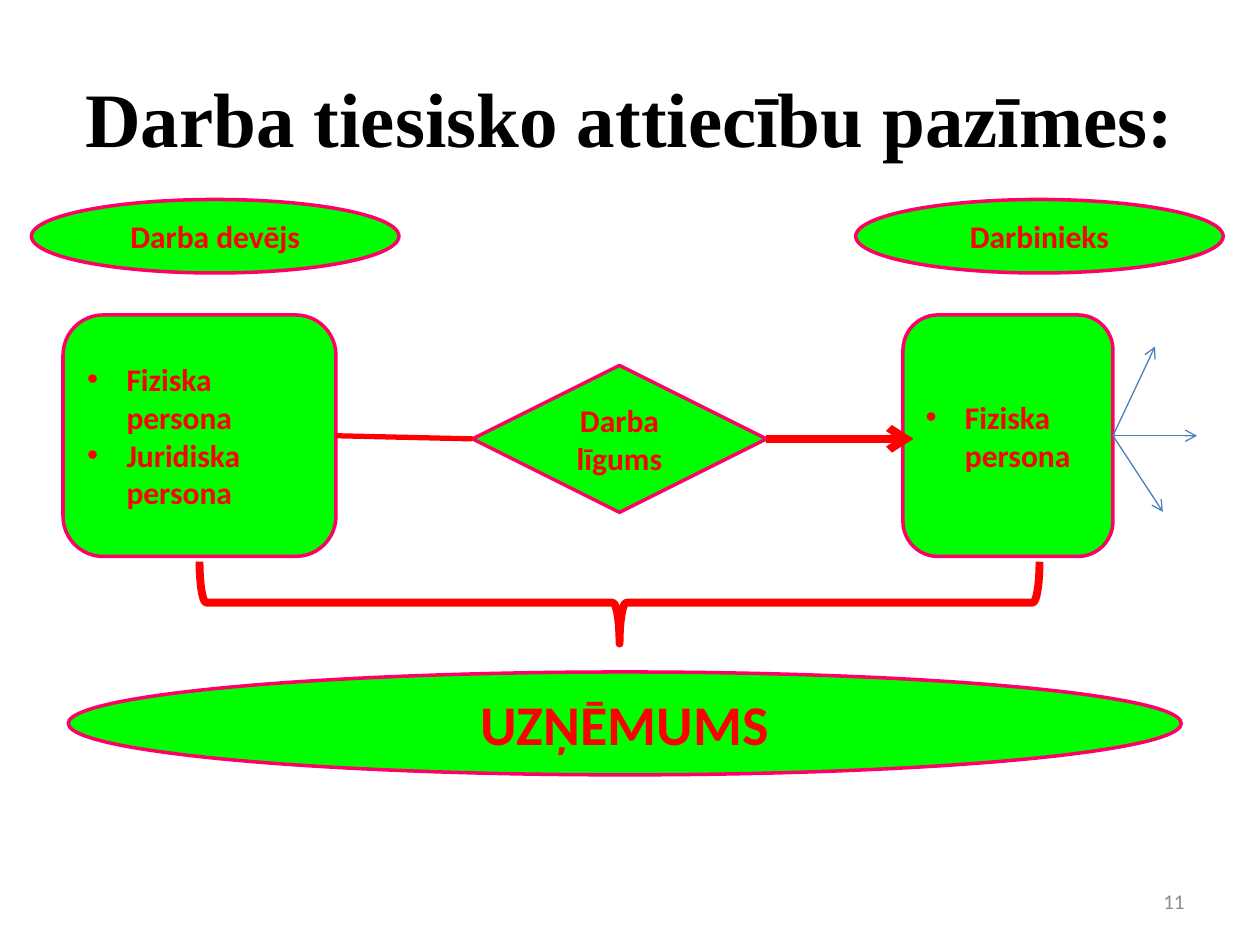
from lxml import etree
from pptx import Presentation
from pptx.dml.color import RGBColor
from pptx.enum import shapes, text
from pptx.oxml import ns
from pptx.util import Pt

GREEN = RGBColor(0x00, 0xFF, 0x00)
PINK = RGBColor(0xFF, 0x00, 0x66)
RED = RGBColor(0xFF, 0x00, 0x00)
BLUE = RGBColor(0x4B, 0x7E, 0xBC)
GREY = RGBColor(0x8C, 0x8C, 0x8C)
BLACK = RGBColor(0, 0, 0)

PRESET = shapes.MSO_SHAPE
ALIGN = text.PP_ALIGN
LABEL = {"name": "Calibri", "size": Pt(18), "bold": True}
HEADING = {"name": "Times New Roman", "size": Pt(44), "bold": True}
PAGE = {"name": "Calibri", "size": Pt(12), "bold": False}


def add_child(parent, tag, **attributes):
    return etree.SubElement(parent, ns.qn(tag), attributes)


class Diagram:
    """Holds the current slide and the look of its parts."""

    def __init__(self, slide):
        self.slide = slide

    def set_text(self, frame, lines, style, color, align, bulleted=False):
        frame.word_wrap = True
        frame.vertical_anchor = text.MSO_ANCHOR.MIDDLE
        frame.text = "\n".join(lines)
        for paragraph in frame.paragraphs:
            paragraph.alignment = align
            font = paragraph.runs[0].font
            for key, value in style.items():
                setattr(font, key, value)
            font.color.rgb = color
            if bulleted:
                properties = paragraph._p.get_or_add_pPr()
                properties.set("marL", str(Pt(22.5)))
                properties.set("indent", str(-Pt(22.5)))
                add_child(properties, "a:buFont", typeface="Arial")
                add_child(properties, "a:buChar", char="•")

    def title(self, wording, box):
        heading = self.slide.shapes.title
        for side, value in zip(("left", "top", "width", "height"), box):
            setattr(heading, side, Pt(value))
        self.set_text(heading.text_frame, [wording], HEADING, BLACK, ALIGN.CENTER)

    def node(self, preset, box, lines, bulleted=False, **changes):
        node = self.slide.shapes.add_shape(preset, *map(Pt, box))
        node.shadow.inherit = False
        node.fill.solid()
        node.fill.fore_color.rgb = GREEN
        node.line.color.rgb = PINK
        node.line.width = Pt(2)
        align = ALIGN.JUSTIFY if bulleted else ALIGN.CENTER
        self.set_text(node.text_frame, lines, LABEL | changes, RED, align, bulleted)

    def brace(self, box):
        brace = self.slide.shapes.add_shape(PRESET.RIGHT_BRACE, *map(Pt, box))
        brace.rotation = 90
        brace.shadow.inherit = False
        brace.fill.background()
        brace.line.color.rgb = RED
        brace.line.width = Pt(4.5)

    def link(self, start, end, color, width, arrow=True):
        link = self.slide.shapes.add_connector(
            shapes.MSO_CONNECTOR.STRAIGHT, *map(Pt, (*start, *end)))
        link.line.color.rgb = color
        link.line.width = Pt(width)
        if arrow:
            add_child(link.line._get_or_add_ln(), "a:tailEnd", type="arrow")
        add_child(link._element.spPr, "a:effectLst")

    def page_number(self, number, box):
        label = self.slide.shapes.add_textbox(*map(Pt, box))
        self.set_text(label.text_frame, [number], PAGE, GREY, ALIGN.RIGHT)


def main():
    deck = Presentation()
    deck.slide_width, deck.slide_height = Pt(720), Pt(540)
    diagram = Diagram(deck.slides.add_slide(deck.slide_layouts[5]))
    diagram.title("Darba tiesisko attiecību pazīmes:", (36, 21.6, 648, 90))

    # Parties and the contract between them
    diagram.node(PRESET.ROUNDED_RECTANGLE, (36, 180, 156, 138),
                 ["Fiziska persona", "Juridiska persona"], bulleted=True)
    diagram.node(PRESET.ROUNDED_RECTANGLE, (516, 180, 120, 138),
                 ["Fiziska persona"], bulleted=True)
    diagram.node(PRESET.FLOWCHART_DECISION, (270, 208.8, 168, 84), ["Darba līgums"])

    # Brace joining both parties
    diagram.brace((330.6, 104.4, 46.8, 480))

    # Role names
    for left, role in ((18, "Darba devējs"), (489, "Darbinieks")):
        diagram.node(PRESET.OVAL, (left, 114, 210, 42), [role])

    # Links through the contract
    diagram.link((192, 249), (270, 250.8), RED, 3, arrow=False)
    diagram.link((438, 250.8), (522, 250.8), RED, 4.5)

    # Company
    diagram.node(PRESET.OVAL, (39, 384, 636, 58.8), ["UZŅĒMUMS"], size=Pt(32))

    # Arrows fanning out from the employee
    for tip in ((660, 198), (684, 249), (664.5, 292.5)):
        diagram.link((636, 249), tip, BLUE, 0.75)

    diagram.page_number("11", (516, 500.5, 168, 28.75))
    deck.save("out.pptx")


if __name__ == "__main__":
    main()
